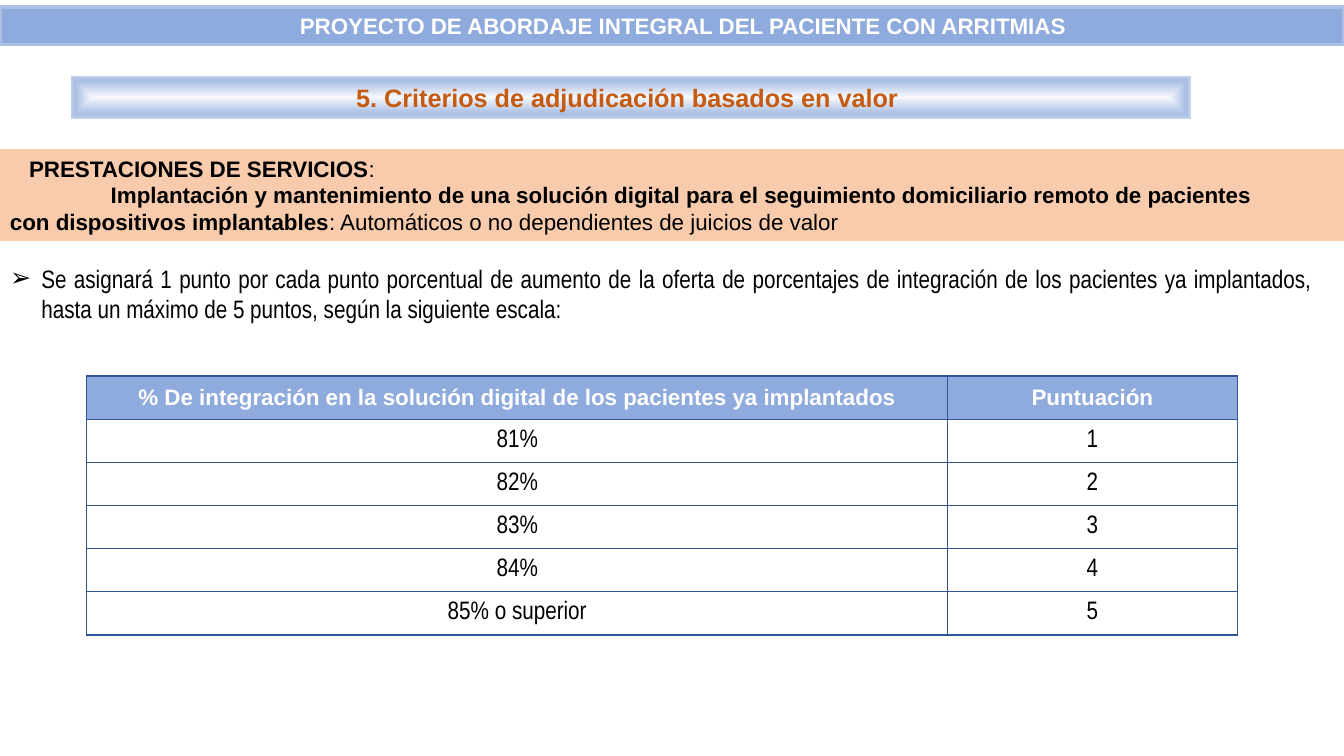
"""Build the slide on value-based award criteria for arrhythmia care."""
from dataclasses import dataclass

from lxml import etree
from pptx import Presentation
from pptx.dml.color import RGBColor
from pptx.enum.shapes import MSO_SHAPE
from pptx.enum.text import MSO_ANCHOR, MSO_AUTO_SIZE, PP_ALIGN
from pptx.oxml import parse_xml
from pptx.oxml.ns import nsdecls, qn
from pptx.util import Inches, Pt

RECT = MSO_SHAPE.RECTANGLE
TOP, MIDDLE = MSO_ANCHOR.TOP, MSO_ANCHOR.MIDDLE
LEFT, CENTER, JUSTIFY = PP_ALIGN.LEFT, PP_ALIGN.CENTER, PP_ALIGN.JUSTIFY
FIXED = MSO_AUTO_SIZE.NONE
WIDE, HIGH = Inches(13.33), Inches(7.5)

HUES = {
    "white": "FFFFFF", "black": "000000", "blue": "8FAADC", "edge": "ABC0E4",
    "pale": "F6F8FC", "rim": "C7D5ED", "navy": "2F5597", "peach": "F8CBAD",
    "rust": "C55A11",
}


@dataclass(frozen=True)
class Box:
    """Hold a frame as percentages of the slide."""
    x: float
    y: float
    w: float
    h: float

    def frame(self) -> tuple[int, int, int, int]:
        """Return left, top, width and height."""
        return (int(WIDE * self.x / 100), int(HIGH * self.y / 100),
                int(WIDE * self.w / 100), int(HIGH * self.h / 100))


@dataclass(frozen=True)
class Run:
    """Hold a piece of text and its look."""
    text: str
    size: int = 16
    font: str = "Arial"
    hue: str = "black"
    bold: bool = False


@dataclass(frozen=True)
class Para:
    """Hold lines of runs with alignment and indents in inches."""
    lines: tuple[tuple[Run, ...], ...]
    align: PP_ALIGN = LEFT
    margin: float = 0
    indent: float = 0
    spread: float = 1
    bullet: str = ""


BOXES = {
    "title": Box(5.25, 10, 83.35, 5.73),
    "work": Box(0, 19.73, 100, 12.13),
    "rule": Box(0, 34.13, 98.43, 13.47),
    "scores": Box(6.45, 49.73, 85.6, 34.27),
    "head": Box(0, 0.93, 100, 4.93),
}
COLS = (64.07, 21.53)
STOPS = ((0, "pale"), (74, "edge"), (83, "edge"), (100, "rim"))

TITLE = Para(((Run("5. Criterios de adjudicación basados en valor ", 18,
                   hue="rust", bold=True),),), CENTER, spread=1.07)
HEAD = Para(((Run("PROYECTO DE ABORDAJE INTEGRAL DEL PACIENTE CON ARRITMIAS",
                  hue="white", bold=True),),), CENTER, margin=0.22)
WORK = (
    Para(((Run("PRESTACIONES DE SERVICIOS", bold=True), Run(":")),), margin=0.19),
    Para((
        (Run("Implantación y mantenimiento de una solución digital para el "
             "seguimiento domiciliario remoto de pacientes", bold=True),),
        (Run("con dispositivos implantables", bold=True),
         Run(": Automáticos o no dependientes de juicios de valor")),
    ), indent=1),
)
RULE = Para(((Run(
    "Se asignará 1 punto por cada punto porcentual de aumento de la oferta de "
    "porcentajes de integración de los pacientes ya implantados, hasta un "
    "máximo de 5 puntos, según la siguiente escala:", 18, "Arial Narrow"),),),
    JUSTIFY, 0.31, -0.31, bullet="➢")
SCORES = (
    ("% De integración en la solución digital de los pacientes ya implantados",
     "Puntuación"),
    ("81%", "1"), ("82%", "2"), ("83%", "3"), ("84%", "4"),
    ("85% o superior", "5"),
)


def tint(name: str) -> RGBColor:
    """Look up a colour."""
    return RGBColor.from_string(HUES[name])


def write(frame, paras: tuple[Para, ...], anchor: MSO_ANCHOR) -> None:
    """Fill a text frame run by run."""
    frame.word_wrap = True
    frame.vertical_anchor = anchor
    for i, para in enumerate(paras):
        p = frame.paragraphs[0] if i == 0 else frame.add_paragraph()
        p.alignment, p.line_spacing = para.align, para.spread
        p.space_before = p.space_after = Pt(0)
        props = p._p.get_or_add_pPr()
        props.set("marL", str(Inches(para.margin)))
        props.set("indent", str(Inches(para.indent)))
        if para.bullet:
            etree.SubElement(props, qn("a:buFont")).set("typeface", "Arial")
            etree.SubElement(props, qn("a:buChar")).set("char", para.bullet)
        else:
            etree.SubElement(props, qn("a:buNone"))
        for j, line in enumerate(para.lines):
            if j:
                p.add_line_break()
            for item in line:
                run = p.add_run()
                run.text = item.text
                run.font.size, run.font.name = Pt(item.size), item.font
                run.font.bold = item.bold
                run.font.color.rgb = tint(item.hue)


def place(shape, box: Box, paras: tuple[Para, ...], anchor: MSO_ANCHOR) -> None:
    """Move a placeholder and write its text."""
    shape.left, shape.top, shape.width, shape.height = box.frame()
    shape.text_frame.auto_size = FIXED
    write(shape.text_frame, paras, anchor)


def shade(shape) -> None:
    """Give a shape a gradient that runs from its centre to its rim."""
    stops = "".join(f'<a:gs pos="{pos * 1000}"><a:srgbClr val="{HUES[hue]}"/></a:gs>'
                    for pos, hue in STOPS)
    shape._element.spPr.append(parse_xml(
        f'<a:gradFill {nsdecls("a")}><a:gsLst>{stops}</a:gsLst>'
        '<a:path path="shape"><a:fillToRect l="50000" t="50000" r="50000" '
        'b="50000"/></a:path></a:gradFill>'))


def band(slide, box: Box, fill: str, edge: str, paras: tuple[Para, ...],
         anchor: MSO_ANCHOR) -> None:
    """Draw a filled strip of text."""
    shape = slide.shapes.add_shape(RECT, *box.frame())
    shape.shadow.inherit = False
    shape.fill.solid()
    shape.fill.fore_color.rgb = tint(fill)
    if edge:
        shape.line.color.rgb, shape.line.width = tint(edge), Pt(2.25)
    else:
        shape.line.fill.background()
    write(shape.text_frame, paras, anchor)


def border(cell) -> None:
    """Rule all four sides of a cell."""
    props = cell._tc.get_or_add_tcPr()
    for side in "LRTB":
        props.append(parse_xml(
            f'<a:ln{side} {nsdecls("a")} w="{Pt(1)}"><a:solidFill>'
            f'<a:srgbClr val="{HUES["navy"]}"/></a:solidFill></a:ln{side}>'))


def grid(slide, box: Box) -> None:
    """Draw the table of scores."""
    table = slide.shapes.add_table(len(SCORES), len(COLS), *box.frame()).table
    table.first_row = table.horz_banding = False
    for col, share in zip(table.columns, COLS):
        col.width = int(WIDE * share / 100)
    for r, row in enumerate(SCORES):
        for c, text in enumerate(row):
            cell = table.cell(r, c)
            border(cell)
            if r == 0:
                cell.fill.solid()
                cell.fill.fore_color.rgb = tint("blue")
                run = Run(text, hue="white", bold=True)
            else:
                cell.fill.background()
                run = Run(text, 18, "Arial Narrow")
            write(cell.text_frame, (Para(((run,),), CENTER),), MIDDLE)
            cell.vertical_anchor = MIDDLE


def main() -> None:
    """Assemble and save the slide."""
    deck = Presentation()
    deck.slide_width, deck.slide_height = WIDE, HIGH
    slide = deck.slides.add_slide(deck.slide_layouts[1])
    title, body = slide.shapes.title, slide.placeholders[1]
    place(title, BOXES["title"], (TITLE,), TOP)
    shade(title)
    place(body, BOXES["rule"], (RULE,), TOP)
    band(slide, BOXES["work"], "peach", "", WORK, MIDDLE)
    grid(slide, BOXES["scores"])
    band(slide, BOXES["head"], "blue", "edge", (HEAD,), MIDDLE)
    deck.save("out.pptx")


if __name__ == "__main__":
    main()
